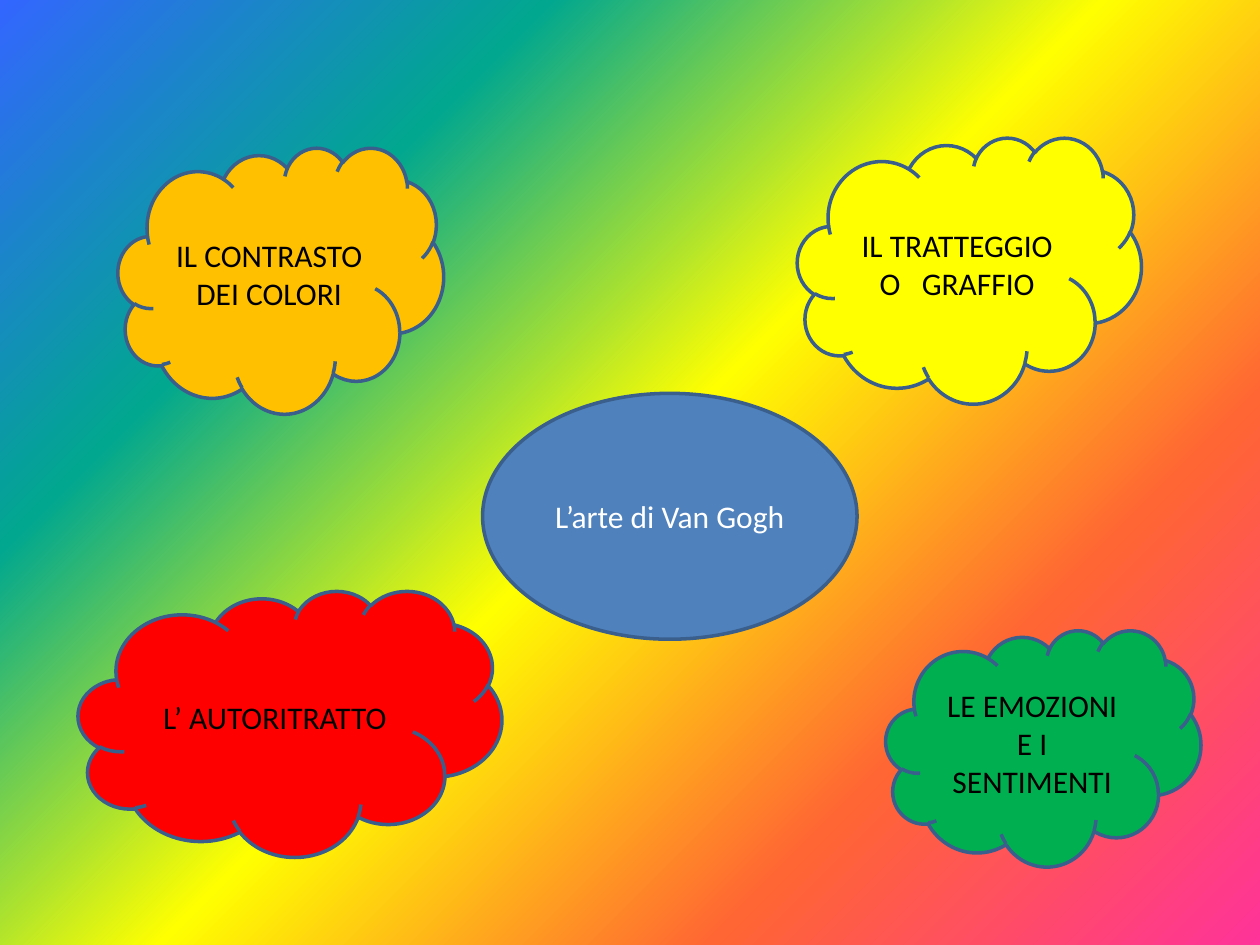
from dataclasses import dataclass

import lxml.etree
import pptx
import pptx.dml.color
import pptx.enum.shapes
import pptx.enum.text
import pptx.oxml.ns
import pptx.slide
import pptx.util

Pt = pptx.util.Pt
ShapeKind = pptx.enum.shapes.MSO_SHAPE


@dataclass(frozen=True)
class Theme:
    font: str = "Calibri"
    text_size: float = 18
    outline_width: float = 2
    outline: str = "3A5F8C"
    dark_text: str = "000000"
    light_text: str = "FFFFFF"
    blue: str = "4F81BD"
    orange: str = "FFC000"
    yellow: str = "FFFF00"
    red: str = "FF0000"
    green: str = "00B050"
    rainbow: tuple[str, ...] = ("FF3399", "FF6633", "FFFF00", "01A78F", "3366FF")


@dataclass(frozen=True)
class Bubble:
    text: str
    left: float
    top: float
    width: float
    height: float
    fill: str
    text_color: str
    kind: ShapeKind = ShapeKind.CLOUD


THEME = Theme()

BUBBLES = (
    Bubble("L’arte di Van Gogh", 275.75, 224.75, 214, 140.5,
           THEME.blue, THEME.light_text, ShapeKind.OVAL),
    Bubble("IL CONTRASTO DEI COLORI", 67.5, 84.25, 186, 152, THEME.orange, THEME.dark_text),
    Bubble("IL TRATTEGGIO O   GRAFFIO", 455.75, 78.5, 196.5, 152, THEME.yellow, THEME.dark_text),
    Bubble("L’ AUTORITRATTO", 44.75, 337.5, 242, 152, THEME.red, THEME.dark_text),
    Bubble("LE EMOZIONI E I SENTIMENTI", 506.25, 360, 180, 135, THEME.green, THEME.dark_text),
)


def rgb(value: str) -> pptx.dml.color.RGBColor:
    return pptx.dml.color.RGBColor.from_string(value)


def paint_background(slide: pptx.slide.Slide, colors: tuple[str, ...]) -> None:
    """Spread the colours evenly, starting from the bottom right corner."""
    qn = pptx.oxml.ns.qn
    add = lxml.etree.SubElement
    slide.background.fill.gradient()
    gradient = next(slide.element.iter(qn("a:gradFill")))
    for child in list(gradient):
        gradient.remove(child)
    stops = add(gradient, qn("a:gsLst"))
    for index, color in enumerate(colors):
        position = 100000 * index // (len(colors) - 1)
        stop = add(stops, qn("a:gs"), pos=str(position))
        add(stop, qn("a:srgbClr"), val=color)
    circle = add(gradient, qn("a:path"), path="circle")
    add(circle, qn("a:fillToRect"), l="100000", t="100000")
    add(gradient, qn("a:tileRect"), r="-100000", b="-100000")


def add_bubble(slide: pptx.slide.Slide, bubble: Bubble) -> None:
    shape = slide.shapes.add_shape(
        bubble.kind, Pt(bubble.left), Pt(bubble.top), Pt(bubble.width), Pt(bubble.height))
    shape.shadow.inherit = False
    shape.fill.solid()
    shape.fill.fore_color.rgb = rgb(bubble.fill)
    shape.line.color.rgb = rgb(THEME.outline)
    shape.line.width = Pt(THEME.outline_width)

    frame = shape.text_frame
    frame.word_wrap = True
    frame.vertical_anchor = pptx.enum.text.MSO_ANCHOR.MIDDLE
    paragraph = frame.paragraphs[0]
    paragraph.alignment = pptx.enum.text.PP_ALIGN.CENTER
    run = paragraph.add_run()
    run.text = bubble.text
    run.font.name = THEME.font
    run.font.size = Pt(THEME.text_size)
    run.font.color.rgb = rgb(bubble.text_color)


def main() -> None:
    presentation = pptx.Presentation()
    presentation.slide_width = Pt(720)
    presentation.slide_height = Pt(540)
    slide = presentation.slides.add_slide(presentation.slide_layouts[6])
    paint_background(slide, THEME.rainbow)
    for bubble in BUBBLES:
        add_bubble(slide, bubble)
    presentation.save("out.pptx")


if __name__ == "__main__":
    main()
